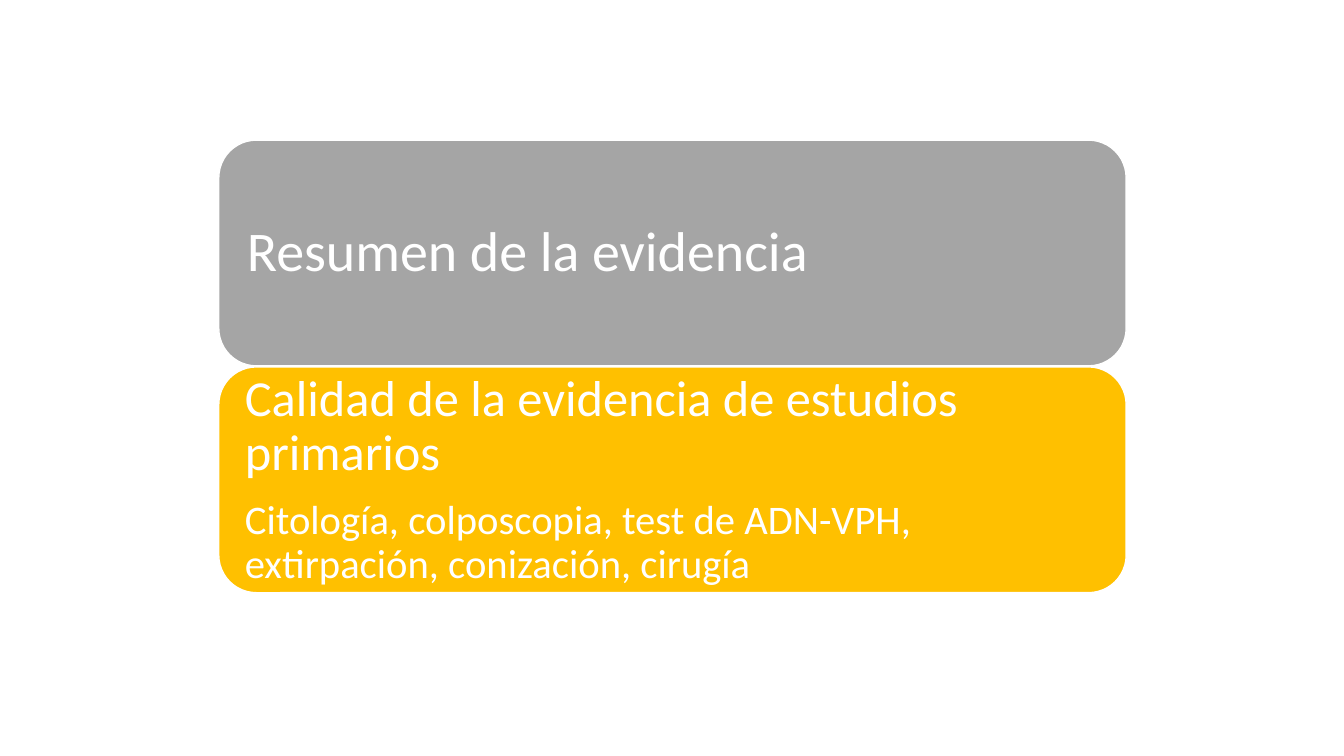
from pptx import Presentation
from pptx.dml.color import RGBColor
from pptx.enum.shapes import MSO_SHAPE
from pptx.enum.text import MSO_ANCHOR, PP_ALIGN
from pptx.util import Inches, Pt


def color(value):
    return RGBColor.from_string(value)


class SlideBuilder:
    font_name = "Calibri"
    white = "FFFFFF"

    def __init__(self, slide):
        self.slide = slide

    def panel(self, left, top, width, height, fill, inset, lines):
        """Add a rounded panel; lines holds (text, size in points) pairs."""
        shape = self.slide.shapes.add_shape(
            MSO_SHAPE.ROUNDED_RECTANGLE,
            Inches(left), Inches(top), Inches(width), Inches(height))
        shape.shadow.inherit = False
        shape.fill.solid()
        shape.fill.fore_color.rgb = color(fill)
        shape.line.color.rgb = color(self.white)
        shape.line.width = Pt(1)

        text_frame = shape.text_frame
        text_frame.word_wrap = True
        text_frame.vertical_anchor = MSO_ANCHOR.MIDDLE
        text_frame.margin_left = text_frame.margin_right = Inches(inset)
        text_frame.margin_top = text_frame.margin_bottom = Inches(inset)
        text_frame.text = "\n".join(text for text, size in lines)
        for paragraph, (text, size) in zip(text_frame.paragraphs, lines):
            paragraph.alignment = PP_ALIGN.LEFT
            paragraph.line_spacing = 0.9
            paragraph.space_after = Pt(round(0.35 * size, 1))
            for run in paragraph.runs:
                run.font.name = self.font_name
                run.font.size = Pt(size)
                run.font.color.rgb = color(self.white)


def main():
    presentation = Presentation()
    presentation.slide_width = Inches(13.33)
    presentation.slide_height = Inches(7.5)
    slide = presentation.slides.add_slide(presentation.slide_layouts[6])
    builder = SlideBuilder(slide)

    left, top, width, height, pitch = 2.17, 1.39, 9, 2.24, 2.25
    panels = [
        ("A5A5A5", 0.17, [("Resumen de la evidencia", 40)]),
        ("FFC000", 0.15, [
            ("Calidad de la evidencia de estudios primarios", 36),
            ("Citología, colposcopia, test de ADN-VPH, "
             "extirpación, conización, cirugía", 29),
        ]),
    ]
    for index, (fill, inset, lines) in enumerate(panels):
        builder.panel(left, top + index * pitch, width, height, fill, inset, lines)

    presentation.save("out.pptx")


if __name__ == "__main__":
    main()
